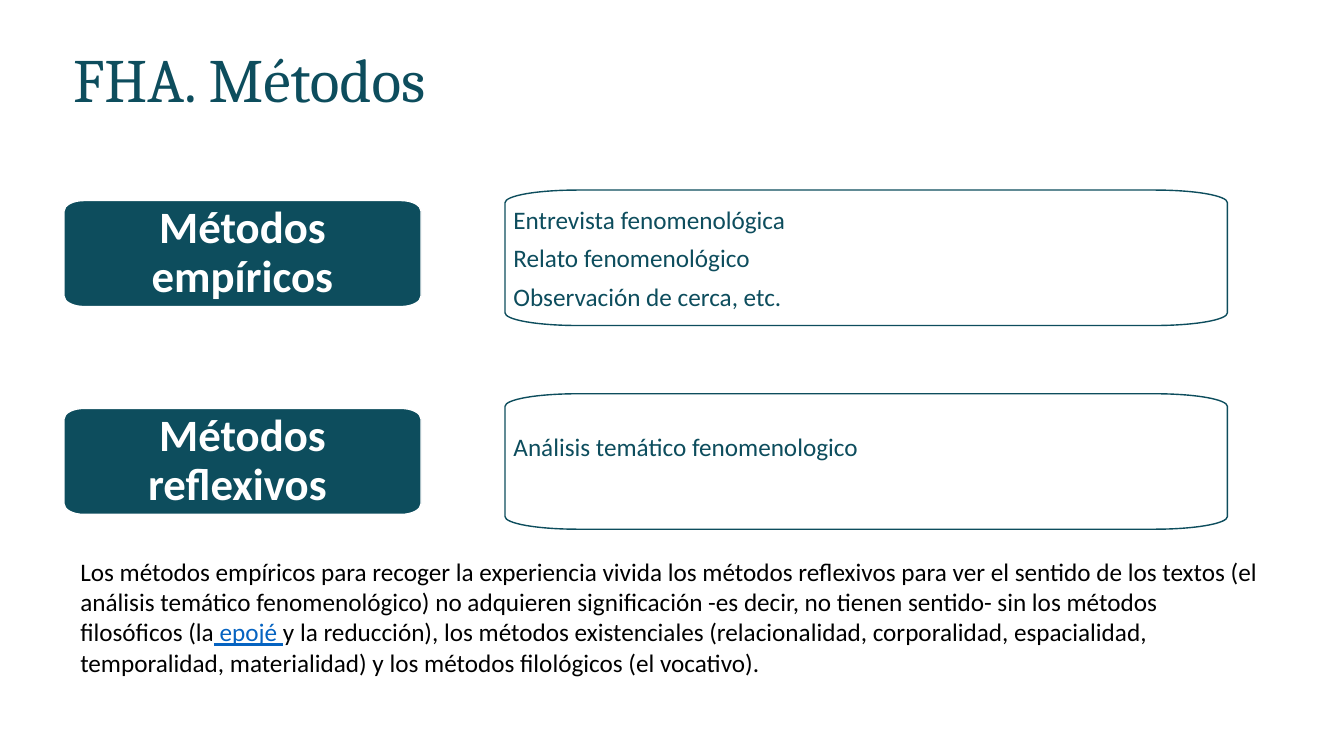
from math import cos, pi, sin, tan

from lxml import etree
from pptx import Presentation
from pptx.dml.color import RGBColor
from pptx.enum.text import MSO_ANCHOR, MSO_AUTO_SIZE, PP_ALIGN
from pptx.oxml.ns import qn
from pptx.util import Pt

PX = 9525
TEAL, WHITE, BLACK, LINK_BLUE = "0D4D5D", "FFFFFF", "000000", "0563C1"
BODY_FONT, TITLE_FONT = "Calibri", "Cambria"
CENTER, JUSTIFY, LEFT = PP_ALIGN.CENTER, PP_ALIGN.JUSTIFY, PP_ALIGN.LEFT
TOP, MIDDLE = MSO_ANCHOR.TOP, MSO_ANCHOR.MIDDLE
GROW = MSO_AUTO_SIZE.SHAPE_TO_FIT_TEXT
HANDLE = 4 / 3 * tan(pi / 16)

METHODS = [
    ("Métodos empíricos", (61, 191, 340, 101), (481, 181, 688, 129), 8,
     ["Entrevista fenomenológica", "Relato fenomenológico", "Observación de cerca, etc."]),
    ("Métodos reflexivos ", (61, 389, 340, 101), (481, 375, 688, 129), 37,
     ["Análisis temático fenomenologico"]),
]
NOTE = [
    ("Los métodos empíricos para recoger la experiencia vivida los métodos reflexivos "
     "para ver el sentido de los textos (el análisis temático fenomenológico) no adquieren "
     "significación -es decir, no tienen sentido- sin los métodos filosóficos (la", BLACK, False),
    (" epojé ", LINK_BLUE, True),
    ("y la reducción), los métodos existenciales (relacionalidad, corporalidad, espacialidad, "
     "temporalidad, materialidad) y los métodos filológicos (el vocativo).", BLACK, False),
]


def color(hex_code):
    """Return the colour for a hex string."""
    return RGBColor.from_string(hex_code)


def emu(lengths):
    """Turn px lengths into whole EMU."""
    return [round(length * PX) for length in lengths]


def style(paragraph, size, hex_code, align, font=BODY_FONT, bold=False):
    """Set the font and alignment of a whole paragraph."""
    paragraph.alignment = align
    paragraph.font.name = font
    paragraph.font.size = Pt(size)
    paragraph.font.bold = bold
    paragraph.font.color.rgb = color(hex_code)


def quarter_arc(quarter):
    """Return the start of a unit quarter arc and the points of its two curves."""
    angles = [(quarter + half / 2) * pi / 2 for half in range(3)]
    points = [(cos(angles[0]), sin(angles[0]))]
    for a, b in zip(angles, angles[1:]):
        points += [(cos(a) - HANDLE * sin(a), sin(a) + HANDLE * cos(a)),
                   (cos(b) + HANDLE * sin(b), sin(b) - HANDLE * cos(b)),
                   (cos(b), sin(b))]
    return points


def bend_corners(frame):
    """Turn the six points that follow each corner start into two curves."""
    segments = list(frame._element.iter(qn("a:lnTo")))
    for corner in range(4):
        for first in (7 * corner, 7 * corner + 3):
            curve = etree.Element(qn("a:cubicBezTo"))
            segments[first].addprevious(curve)
            for segment in segments[first:first + 3]:
                curve.append(segment[0])
                segment.getparent().remove(segment)


def rounded_box(slide, box, corner, line_color):
    """Draw a box with elliptical corners and return it."""
    left, top, width, height = box
    rx, ry = corner
    right, bottom = left + width - rx, top + height - ry
    centers = [(right, bottom), (left + rx, bottom), (left + rx, top + ry), (right, top + ry)]
    outline = [emu((cx + rx * x, cy + ry * y))
               for quarter, (cx, cy) in enumerate(centers)
               for x, y in quarter_arc(quarter)]
    builder = slide.shapes.build_freeform(*outline[0])
    builder.add_line_segments(outline[1:], close=True)
    frame = builder.convert_to_shape()
    bend_corners(frame)
    frame.shadow.inherit = False
    frame.line.color.rgb = color(line_color)
    frame.line.width = Pt(1)
    return frame


def set_insets(text_frame, inset, bottom):
    """Wrap and centre the text vertically inside its insets."""
    text_frame.word_wrap = True
    text_frame.vertical_anchor = MIDDLE
    text_frame.margin_left = text_frame.margin_right = text_frame.margin_top = inset * PX
    text_frame.margin_bottom = bottom * PX


def add_title(slide, box, wording):
    """Place the slide title."""
    title = slide.shapes.title
    title.left, title.top, title.width, title.height = emu(box)
    title.text_frame.text = wording
    title.text_frame.vertical_anchor = TOP
    title.text_frame.auto_size = GROW
    style(title.text_frame.paragraphs[0], 44, TEAL, JUSTIFY, TITLE_FONT)


def add_method(slide, box, wording):
    """Place the filled name of a group of methods."""
    method = rounded_box(slide, box, (19, 10), WHITE)
    method.fill.solid()
    method.fill.fore_color.rgb = color(TEAL)
    set_insets(method.text_frame, 20, 20)
    heading = method.text_frame.paragraphs[0]
    heading.text = wording
    heading.line_spacing = 0.9
    style(heading, 32, WHITE, CENTER, bold=True)


def add_techniques(slide, box, techniques, bottom):
    """Place the outlined list of techniques of one group."""
    panel = rounded_box(slide, box, (69, 12), TEAL)
    panel.fill.background()
    set_insets(panel.text_frame, 8, bottom)
    panel.text_frame.text = "\n".join(techniques)
    for paragraph in panel.text_frame.paragraphs:
        style(paragraph, 18, TEAL, JUSTIFY)
        paragraph.space_before = Pt(6)


def add_note(slide, box):
    """Place the closing explanation."""
    note = slide.shapes.add_textbox(*emu(box)).text_frame
    note.word_wrap = True
    note.auto_size = GROW
    paragraph = note.paragraphs[0]
    style(paragraph, 18, BLACK, LEFT)
    for wording, hex_code, underlined in NOTE:
        run = paragraph.add_run()
        run.text = wording
        run.font.color.rgb = color(hex_code)
        run.font.underline = underlined


def main():
    """Build the slide and save it."""
    deck = Presentation()
    deck.slide_width, deck.slide_height = emu((1280, 720))
    slide = deck.slides.add_slide(deck.slide_layouts[5])
    add_title(slide, (60, 34, 1154, 81), "FHA. Métodos")
    for name, name_box, panel_box, bottom, techniques in METHODS:
        add_method(slide, name_box, name)
        add_techniques(slide, panel_box, techniques, bottom)
    add_note(slide, (67, 525, 1141, 126))
    deck.save("out.pptx")


if __name__ == "__main__":
    main()
